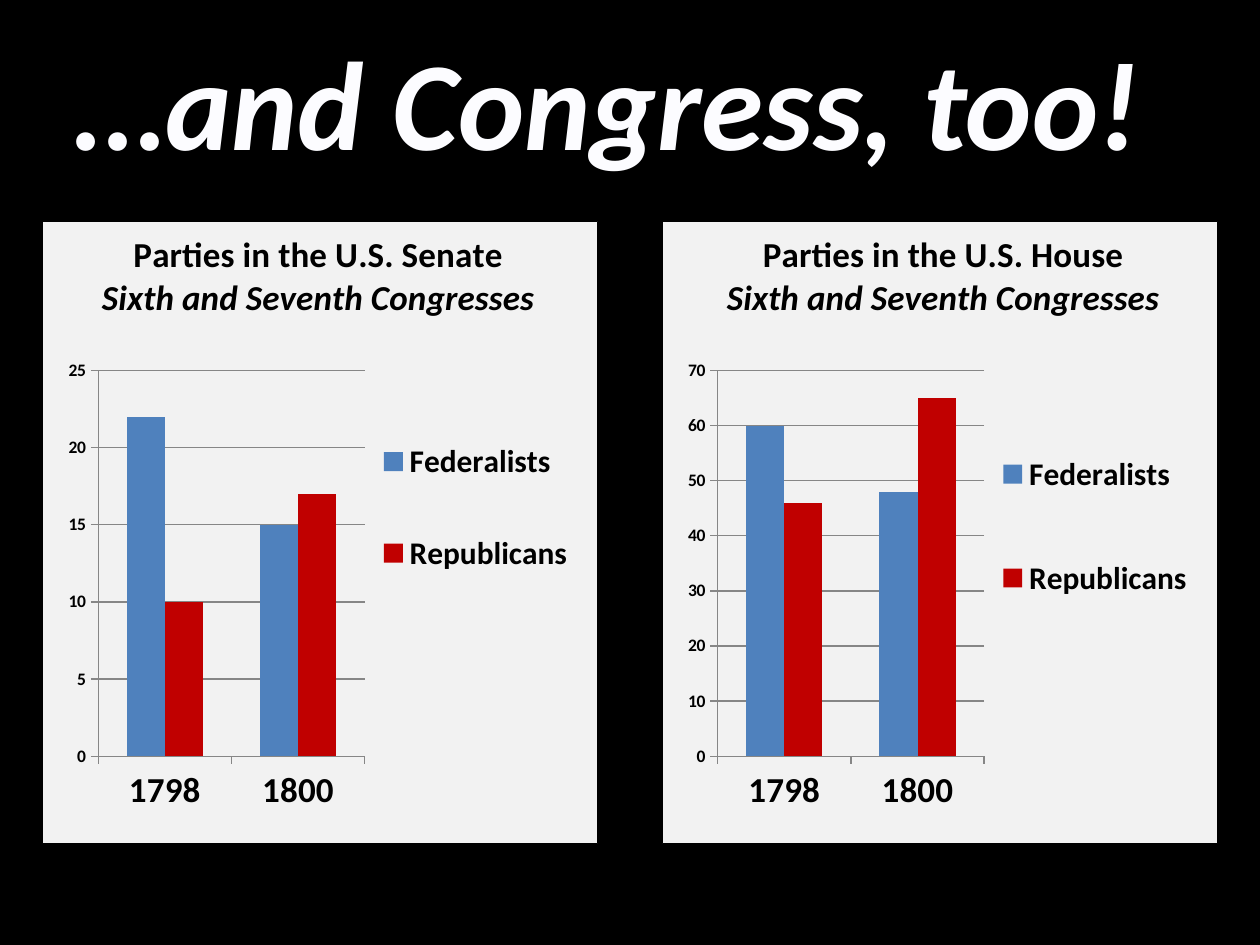
from pptx import Presentation
from pptx.chart.data import CategoryChartData as Data
from pptx.dml.color import RGBColor
from pptx.enum.chart import XL_CHART_TYPE as Kind, XL_LEGEND_POSITION as Side, XL_TICK_MARK as Tick
from pptx.enum.text import MSO_ANCHOR as Anchor, PP_ALIGN as Align
from pptx.oxml import parse_xml
from pptx.oxml.ns import nsdecls
from pptx.util import Pt

HEX = {"back": "000000", "head": "FCFCFF", "text": "000000", "panel": "F2F2F2",
       "grid": "868686", "Federalists": "4F81BD", "Republicans": "C00000"}
FACE = "Calibri"
HEAD = "…and Congress, too!"
SUB = "Sixth and Seventh Congresses"
YEARS = ["1798", "1800"]
PANELS = [
    {"name": "Parties in the U.S. Senate", "top": 25, "step": 5,
     "seats": {"Federalists": [22, 15], "Republicans": [10, 17]},
     "title": (0.1, 0.01), "legend": (0.6, 0.27, 0.36, 0.38)},
    {"name": "Parties in the U.S. House", "top": 70, "step": 10,
     "seats": {"Federalists": [60, 48], "Republicans": [46, 65]},
     "title": (0.11, 0.01), "legend": (0.6, 0.27, 0.36, 0.44)},
]
PLOT = (0.1, 0.24, 0.48, 0.62)
WIDE, TALL = 720, 540
EDGE, TOP, PANEL_W, PANEL_H = 24, 126, 318, 356.4


def color(key):
    return RGBColor.from_string(HEX[key])


def style(font, key="text", **look):
    for attr, value in {"name": FACE, "bold": True, **look}.items():
        setattr(font, attr, value)
    font.color.rgb = color(key)


def place(part, spots, inner=False):
    for old in part.xpath("./c:layout"):
        part.remove(old)
    tags = '<c:layoutTarget val="inner"/>' if inner else ""
    tags += '<c:xMode val="edge"/><c:yMode val="edge"/>'
    tags += "".join(f'<c:{tag} val="{spot}"/>' for tag, spot in zip("xywh", spots))
    layout = parse_xml(f'<c:layout {nsdecls("c")}><c:manualLayout>{tags}</c:manualLayout></c:layout>')
    if inner:
        part.insert(0, layout)
    else:
        part.xpath("./c:overlay")[0].addprevious(layout)


def rule(line):
    line.color.rgb = color("grid")
    line.width = Pt(0.75)


def add_title(chart, panel):
    title = chart.chart_title
    frame = title.text_frame
    for i, text in enumerate((panel["name"], SUB)):
        para = frame.add_paragraph() if i else frame.paragraphs[0]
        run = para.add_run()
        run.text = text
        style(run.font, size=Pt(20), italic=bool(i))
    part = title._element
    part.xpath("./c:overlay")[0].set("val", "1")
    place(part, panel["title"])


def add_panel(slide, panel, left):
    data = Data()
    data.categories = YEARS
    for party, seats in panel["seats"].items():
        data.add_series(party, seats)
    chart = slide.shapes.add_chart(Kind.COLUMN_CLUSTERED, Pt(left), Pt(TOP),
                                   Pt(PANEL_W), Pt(PANEL_H), data).chart
    style(chart.font, size=Pt(10))
    root = chart._chartSpace
    root.xpath("./c:txPr")[0].addprevious(parse_xml(
        f'<c:spPr {nsdecls("c", "a")}><a:solidFill><a:srgbClr val="{HEX["panel"]}"/></a:solidFill>'
        f'<a:ln w="9525"><a:solidFill><a:srgbClr val="{HEX["back"]}"/></a:solidFill></a:ln></c:spPr>'))
    add_title(chart, panel)
    place(root.xpath("./c:chart/c:plotArea")[0], PLOT, inner=True)

    bars = chart.plots[0]
    for attr, value in {"gap_width": 150, "overlap": 0, "vary_by_categories": False}.items():
        setattr(bars, attr, value)
    for party in bars.series:
        party.format.fill.solid()
        party.format.fill.fore_color.rgb = color(party.name)

    years, seats = chart.category_axis, chart.value_axis
    for axis, size in ((years, 20), (seats, 10)):
        axis.major_tick_mark = Tick.OUTSIDE
        axis.minor_tick_mark = Tick.NONE
        style(axis.tick_labels.font, size=Pt(size))
        rule(axis.format.line)
    for attr, value in {"minimum_scale": 0, "maximum_scale": panel["top"],
                        "major_unit": panel["step"], "has_major_gridlines": True}.items():
        setattr(seats, attr, value)
    rule(seats.major_gridlines.format.line)

    chart.has_legend = True
    legend = chart.legend
    legend.position = Side.RIGHT
    legend.include_in_layout = False
    style(legend.font, size=Pt(18))
    place(legend._element, panel["legend"])


def main():
    deck = Presentation()
    deck.slide_width, deck.slide_height = Pt(WIDE), Pt(TALL)
    slide = deck.slides.add_slide(deck.slide_layouts[5])
    fill = slide.background.fill
    fill.solid()
    fill.fore_color.rgb = color("back")

    title = slide.shapes.title
    for attr, value in {"left": 36, "top": 12.24, "width": 648, "height": 90}.items():
        setattr(title, attr, Pt(value))
    frame = title.text_frame
    frame.word_wrap = True
    frame.vertical_anchor = Anchor.MIDDLE
    para = frame.paragraphs[0]
    para.alignment = Align.LEFT
    run = para.add_run()
    run.text = HEAD
    style(run.font, "head", size=Pt(72), italic=True)

    for i, panel in enumerate(PANELS):
        add_panel(slide, panel, EDGE + i * (WIDE - 2 * EDGE - PANEL_W))
    deck.save("out.pptx")


if __name__ == "__main__":
    main()
